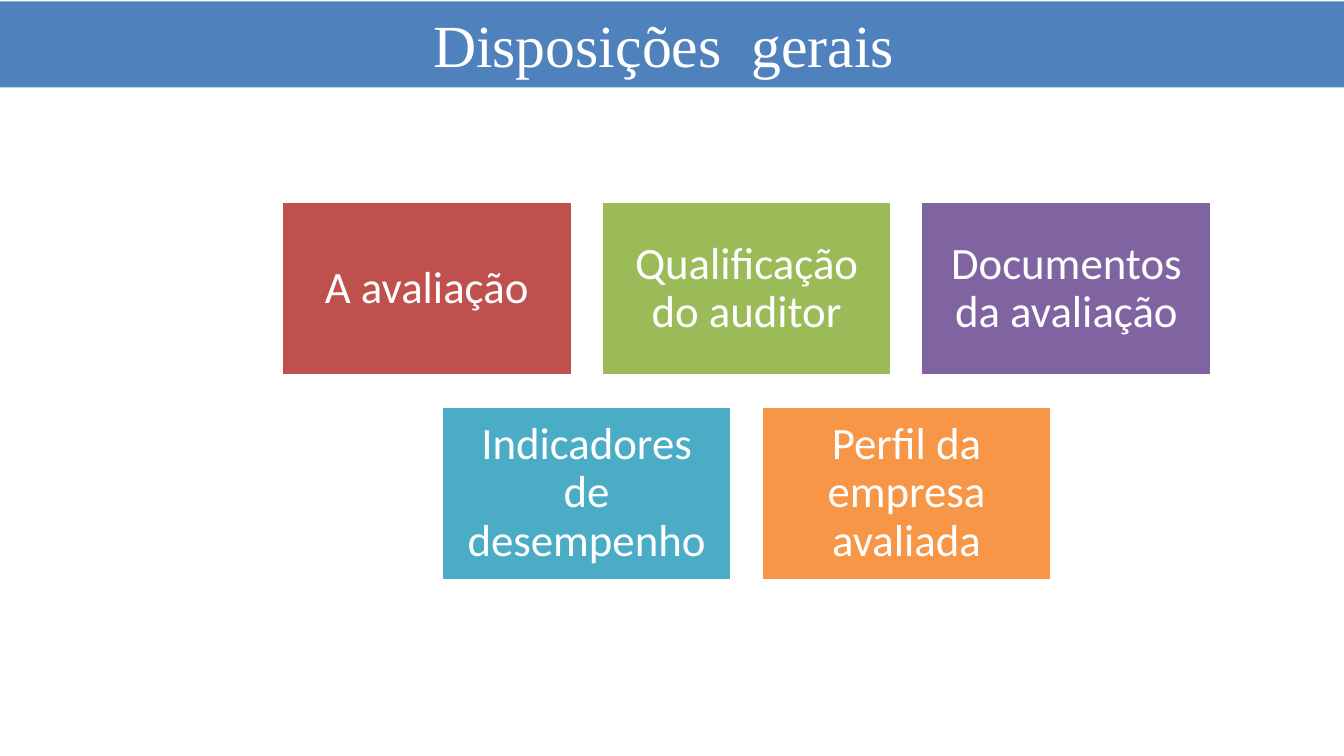
from dataclasses import dataclass

from pptx import Presentation
from pptx import util as u
from pptx.dml import color
from pptx.enum import shapes, text

WIDE = 10
HIGH = WIDE * 9 / 16
LEFT, TOP = 2.09, 1.5
BOX_W, BOX_H = 2.17, 1.3
STEP_X, STEP_Y = 2.38, 1.52
WHITE = "FFFFFF"


@dataclass
class Topic:
    label: str
    fill: str
    col: float
    row: int


TOPICS = [
    Topic("A avaliação", "C0504D", 0, 0),
    Topic("Qualificação do auditor", "9BBB59", 1, 0),
    Topic("Documentos da avaliação", "8064A2", 2, 0),
    Topic("Indicadores de desempenho", "4BACC6", 0.5, 1),
    Topic("Perfil da empresa avaliada", "F79646", 1.5, 1),
]


def paint(part, shade: str) -> None:
    part.solid()
    part.fore_color.rgb = color.RGBColor.from_string(shade)


def write(shape, words: str, size: int, face: str, anchor) -> None:
    frame = shape.text_frame
    frame.text = words
    frame.word_wrap = True
    frame.auto_size = text.MSO_AUTO_SIZE.NONE
    frame.vertical_anchor = anchor
    para = frame.paragraphs[0]
    para.alignment = text.PP_ALIGN.CENTER
    font = para.runs[0].font
    font.size = u.Pt(size)
    font.name = face
    paint(font.fill, WHITE)


def add_title(slide, words: str) -> None:
    bar = slide.shapes.title
    bar.left, bar.top = u.Inches(0), u.Inches(0.01)
    bar.width, bar.height = u.Inches(WIDE), u.Inches(0.64)
    paint(bar.fill, "4F81BD")
    write(bar, words, 32, "Times New Roman", text.MSO_ANCHOR.TOP)
    bar.text_frame.margin_right = u.Inches(0.22)


def add_topic(slide, topic: Topic) -> None:
    box = slide.shapes.add_shape(
        shapes.MSO_SHAPE.RECTANGLE,
        u.Inches(LEFT + topic.col * STEP_X),
        u.Inches(TOP + topic.row * STEP_Y),
        u.Inches(BOX_W),
        u.Inches(BOX_H),
    )
    box.shadow.inherit = False
    paint(box.fill, topic.fill)
    paint(box.line.fill, WHITE)
    box.line.width = u.Pt(2)
    write(box, topic.label, 24, "Calibri", text.MSO_ANCHOR.MIDDLE)
    frame = box.text_frame
    frame.margin_left = frame.margin_right = u.Inches(0.1)
    frame.margin_top = frame.margin_bottom = u.Inches(0.1)
    frame.paragraphs[0].line_spacing = 0.9


def main() -> None:
    deck = Presentation()
    deck.slide_width, deck.slide_height = u.Inches(WIDE), u.Inches(HIGH)
    slide = deck.slides.add_slide(deck.slide_layouts[5])
    add_title(slide, "Disposições  gerais")
    for topic in TOPICS:
        add_topic(slide, topic)
    deck.save("out.pptx")


if __name__ == "__main__":
    main()
